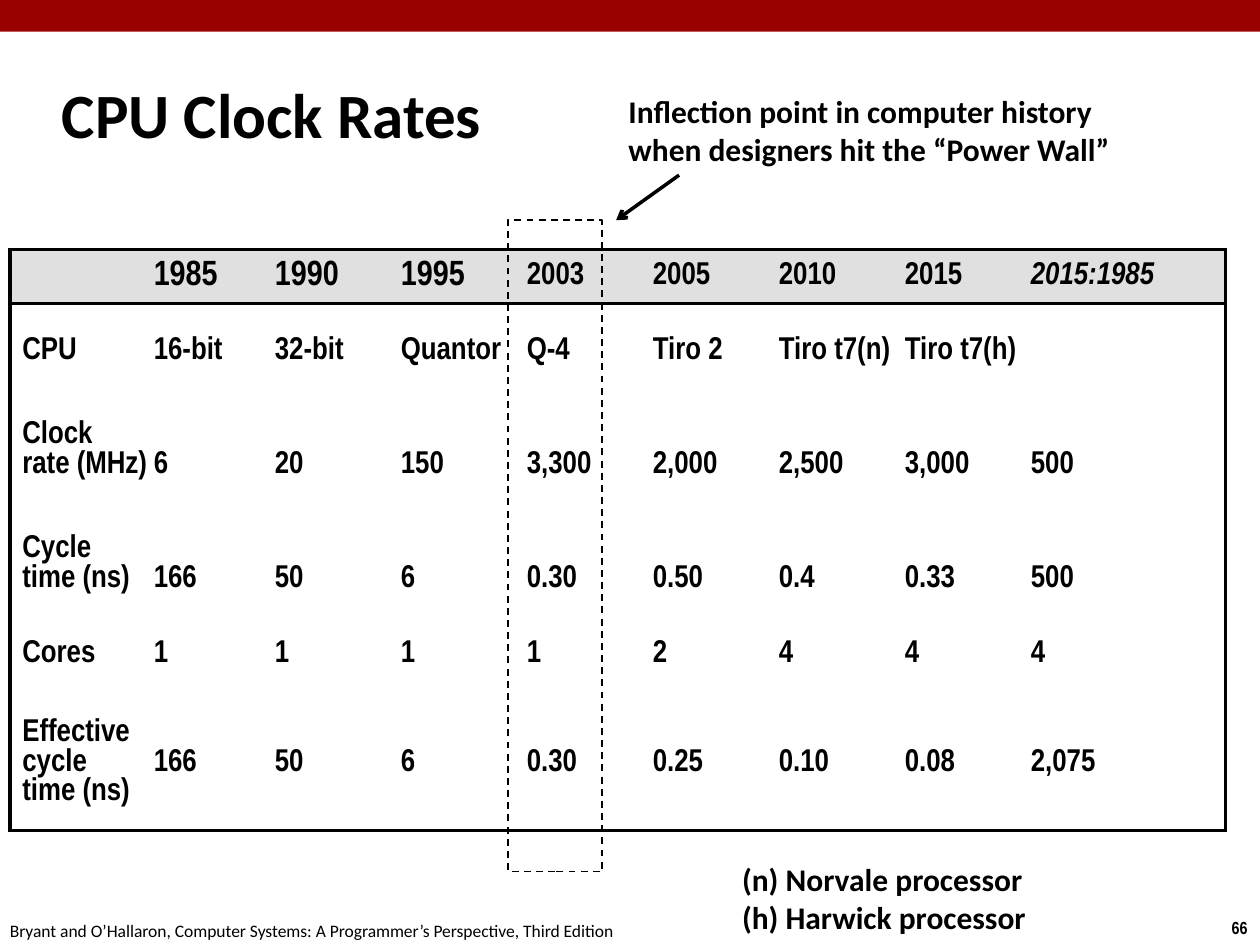
from lxml import etree
from pptx import Presentation
from pptx.dml.color import RGBColor
from pptx.enum.dml import MSO_LINE
from pptx.enum.shapes import MSO_CONNECTOR, MSO_SHAPE
from pptx.enum.text import MSO_ANCHOR, PP_ALIGN
from pptx.oxml.ns import qn
from pptx.util import Cm, Pt

RECTANGLE = MSO_SHAPE.RECTANGLE
STRAIGHT = MSO_CONNECTOR.STRAIGHT
DASH = MSO_LINE.DASH
LEFT, RIGHT = PP_ALIGN.LEFT, PP_ALIGN.RIGHT
MIDDLE, BOTTOM = MSO_ANCHOR.MIDDLE, MSO_ANCHOR.BOTTOM

BLACK, RED, GREY = "000000", "990000", "E0E0E0"
BODY_FONT, TABLE_FONT = "Calibri", "Arial Narrow"
BORDER = Pt(2.25)

RATES = [
    ["", "1985", "1990", "1995", "2003", "2005", "2010", "2015", "2015:1985"],
    ["CPU", "16-bit", "32-bit", "Quantor", "Q-4", "Tiro 2", "Tiro t7(n)", "Tiro t7(h)", ""],
    ["Clock\nrate (MHz)", "6", "20", "150", "3,300", "2,000", "2,500", "3,000", "500"],
    ["Cycle\ntime (ns)", "166", "50", "6", "0.30", "0.50", "0.4", "0.33", "500"],
    ["Cores", "1", "1", "1", "1", "2", "4", "4", "4"],
    ["Effective\ncycle\ntime (ns)", "166", "50", "6", "0.30", "0.25", "0.10", "0.08", "2,075"],
]
COLUMN_WIDTHS = [2.9, 2.44] + [2.54] * 6 + [3.93]
ROW_HEIGHTS = [1.09, 1.27, 2.29, 2.29, 1.52, 3.25]


def color(hex_value):
    """Turn a hex string into a colour."""
    return RGBColor.from_string(hex_value)


def apply(target, formats):
    """Set each attribute named in a dict of format values."""
    for attribute, value in formats.items():
        setattr(target, attribute, value)


def write(frame, text, size, name=BODY_FONT, bold=True, italic=False, align=LEFT):
    """Fill a text frame with uniformly formatted paragraphs."""
    frame.text = text
    for paragraph in frame.paragraphs:
        paragraph.alignment = align
        apply(paragraph.font, {"size": Pt(size), "name": name, "bold": bold, "italic": italic})
        paragraph.font.color.rgb = color(BLACK)


def add_label(slide, box, text, size, **formats):
    """Add an unwrapped text box."""
    frame = slide.shapes.add_textbox(*map(Cm, box)).text_frame
    frame.word_wrap = False
    write(frame, text, size, **formats)


def add_band(slide, box):
    """Add the red band along the top."""
    band = slide.shapes.add_shape(RECTANGLE, *map(Cm, box))
    band.shadow.inherit = False
    band.fill.solid()
    band.fill.fore_color.rgb = color(RED)
    band.line.fill.background()


def add_title(slide, box, text):
    """Move and format the title placeholder."""
    title = slide.shapes.title
    apply(title, dict(zip(("left", "top", "width", "height"), map(Cm, box))))
    title.text_frame.vertical_anchor = MIDDLE
    write(title.text_frame, text, 36)


def set_borders(cell, visible):
    """Draw the visible sides of a cell and clear the others."""
    properties = cell._tc.get_or_add_tcPr()
    for side in "LRTB":
        line = etree.SubElement(properties, qn(f"a:ln{side}"))
        if side in visible:
            line.set("w", str(BORDER))
            fill = etree.SubElement(line, qn("a:solidFill"))
            etree.SubElement(fill, qn("a:srgbClr"), val=BLACK)
        else:
            etree.SubElement(line, qn("a:noFill"))


def add_rates_table(slide, box):
    """Add the table of clock rates with a grey header and an outer frame."""
    last_row, last_column = len(RATES) - 1, len(RATES[0]) - 1
    table = slide.shapes.add_table(len(RATES), len(RATES[0]), *map(Cm, box)).table
    apply(table, {"first_row": False, "horz_banding": False})
    for column, width in zip(table.columns, COLUMN_WIDTHS):
        column.width = Cm(width)
    for r, (row, height) in enumerate(zip(RATES, ROW_HEIGHTS)):
        table.rows[r].height = Cm(height)
        centered = r in (0, last_row)
        for c, value in enumerate(row):
            cell = table.cell(r, c)
            sides = {"L": c == 0, "R": c == last_column,
                     "T": r in (0, 1), "B": r in (0, last_row)}
            set_borders(cell, [side for side, shown in sides.items() if shown])
            if r == 0:
                cell.fill.solid()
                cell.fill.fore_color.rgb = color(GREY)
            else:
                cell.fill.background()
            apply(cell, {
                "margin_left": Cm(0.25 if c == 0 else 0),
                "margin_right": 0,
                "margin_top": Cm(0.74 if r == last_row else 0),
                "margin_bottom": Cm(0.2 if r == last_row else 0),
                "vertical_anchor": MIDDLE if centered else BOTTOM,
            })
            write(cell.text_frame, value, 20 if r == 0 and c < 4 else 18,
                  name=TABLE_FONT, italic=r == 0 and c == last_column)


def add_inflection(slide, box):
    """Add the remark, its arrow and the dashed frame around 2003."""
    left, top, width, height = box
    add_label(slide, (left + 2.18, top, width - 2.18, 1.8),
              "Inflection point in computer history\nwhen designers hit the “Power Wall”", 18)
    frame_top = top + 2.71
    arrow = slide.shapes.add_connector(
        STRAIGHT, Cm(left + 3.45), Cm(top + 1.8), Cm(left + 2.18), Cm(frame_top))
    arrow.line.width = Pt(2)
    arrow.line.color.rgb = color(BLACK)
    etree.SubElement(arrow.line._get_or_add_ln(), qn("a:tailEnd"), type="arrow")
    etree.SubElement(arrow._element.spPr, qn("a:effectLst"))
    year_frame = slide.shapes.add_shape(
        RECTANGLE, Cm(left), Cm(frame_top), Cm(1.9), Cm(height - 2.71))
    year_frame.shadow.inherit = False
    year_frame.fill.background()
    year_frame.line.color.rgb = color(BLACK)
    apply(year_frame.line, {"width": Pt(1), "dash_style": DASH})


def add_footer(slide, box):
    """Add the source of the slide and its number."""
    left, top, width, height = box
    add_label(slide, (left, top, 12.9, height),
              "Bryant and O’Hallaron, Computer Systems: "
              "A Programmer’s Perspective, Third Edition", 10, bold=False)
    add_label(slide, (left + width - 0.86, top - 0.05, 0.86, height), "66", 10,
              name=TABLE_FONT, align=RIGHT)


def main():
    """Build the slide and save it."""
    deck = Presentation()
    apply(deck, {"slide_width": Cm(25.4), "slide_height": Cm(19.05)})
    slide = deck.slides.add_slide(deck.slide_layouts[5])
    add_band(slide, (0, 0, 25.4, 0.64))
    add_title(slide, (0.99, 1.22, 21.08, 2.11), "CPU Clock Rates")
    add_rates_table(slide, (0.2, 5.03, 24.51, 11.71))
    add_inflection(slide, (10.24, 1.73, 12.49, 15.84))
    add_label(slide, (14.71, 17.22, 6.55, 1.8),
              "(n) Norvale processor\n(h) Harwick processor", 18)
    add_footer(slide, (-0.05, 18.42, 25.45, 0.69))
    deck.save("out.pptx")


if __name__ == "__main__":
    main()
